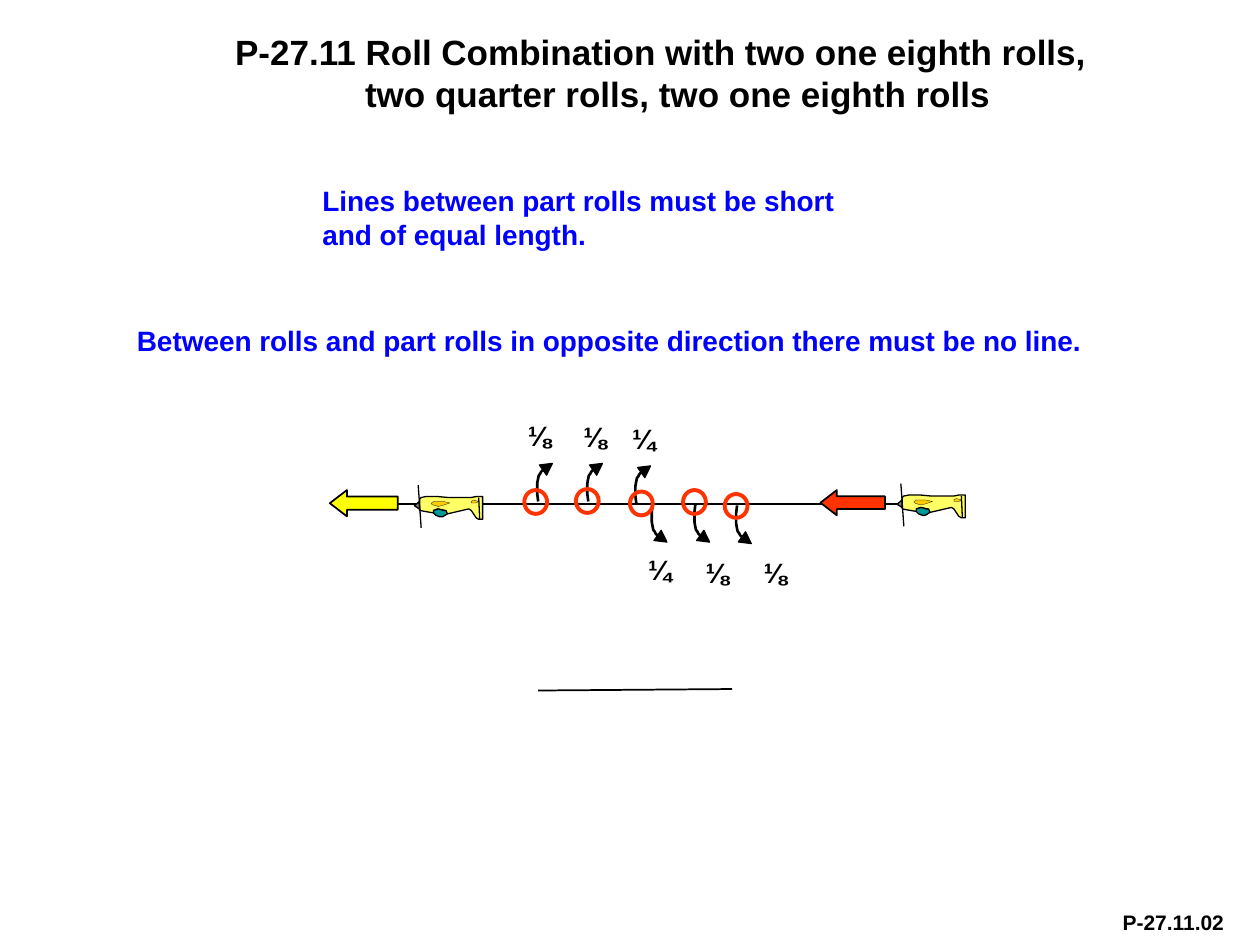
from dataclasses import dataclass

from lxml.etree import SubElement
from pptx import Presentation
from pptx.dml.color import RGBColor as Color
from pptx.enum.shapes import MSO_CONNECTOR as Connector, MSO_SHAPE as Preset
from pptx.enum.text import PP_ALIGN as Align
from pptx.oxml.ns import qn
from pptx.util import Cm, Pt


@dataclass(frozen=True)
class Theme:
    font: str = "Arial"
    black: str = "000000"
    note: str = "0000FF"
    roll: str = "FF3300"
    exit: str = "FFFF00"
    body: str = "FFFF66"
    canopy: str = "009999"
    wing: str = "FFCC00"
    spinner: str = "808080"
    title_size: float = 20
    text_size: float = 16
    footer_size: float = 12


THEME = Theme()

FUSELAGE = [
    (28, 56), (10, 53), (0, 51), (0, 28), (3, 25), (13, 23), (36, 23),
    (58, 25), (104, 25), (114, 23), (127, 23), (127, 69), (119, 69),
    (114, 66), (104, 51), (99, 48), (56, 58), (51, 51), (36, 48), (30, 51),
]
CANOPY = [
    (56, 58), (53, 51), (48, 51), (38, 48), (28, 51),
    (28, 56), (33, 61), (41, 64), (46, 64),
]
WING = [
    (61, 36), (46, 41), (38, 43), (30, 41), (25, 39),
    (23, 37), (28, 33), (38, 33), (48, 33),
]
TAIL = [(119, 33), (109, 30), (104, 33), (104, 36), (114, 36)]


def add_text(page, text, left, top, width, height, size=THEME.text_size,
             color=THEME.black, align=Align.LEFT, hanging=0):
    box = page.shapes.add_textbox(Cm(left), Cm(top), Cm(width), Cm(height))
    box.text_frame.word_wrap = True
    para = box.text_frame.paragraphs[0]
    para.text = text
    para.alignment = align
    if hanging:
        properties = para._p.get_or_add_pPr()
        properties.set("marL", str(Cm(hanging)))
        properties.set("indent", str(-Cm(hanging)))
    for span in para.runs:
        span.font.name = THEME.font
        span.font.size = Pt(size)
        span.font.bold = True
        span.font.color.rgb = Color.from_string(color)


def paint(shape, fill, line, weight):
    shape.shadow.inherit = False
    if fill:
        shape.fill.solid()
        shape.fill.fore_color.rgb = Color.from_string(fill)
    else:
        shape.fill.background()
    shape.line.color.rgb = Color.from_string(line)
    shape.line.width = Pt(weight)


def add_preset(page, preset, left, top, width, height, fill=None,
               line=THEME.black, weight=1.0, rotation=0):
    shape = page.shapes.add_shape(preset, Cm(left), Cm(top), Cm(width), Cm(height))
    shape.rotation = rotation
    paint(shape, fill, line, weight)
    return shape


def add_outline(page, points, x, y, fill=None, weight=0.75, close=True):
    builder = page.shapes.build_freeform(*points[0], scale=Cm(0.01))
    builder.add_line_segments(points[1:], close=close)
    paint(builder.convert_to_shape(Cm(x), Cm(y)), fill, THEME.black, weight)


def add_line(page, x1, y1, x2, y2, weight=1.0):
    line = page.shapes.add_connector(
        Connector.STRAIGHT, Cm(x1), Cm(y1), Cm(x2), Cm(y2))
    line.line.color.rgb = Color.from_string(THEME.black)
    line.line.width = Pt(weight)
    SubElement(line._element.spPr, qn("a:effectLst"))


def add_block_arrow(page, left, top, width, height, fill):
    arrow = add_preset(page, Preset.LEFT_ARROW, left, top, width, height, fill)
    arrow.adjustments[0] = 0.5
    arrow.adjustments[1] = 0.65


def add_roll_arrow(page, x, y, direction):
    steps = 12
    points = []
    for step in range(steps + 1):
        t = step / steps
        first, second, third = 3 * t * (1 - t) ** 2, 3 * t * t * (1 - t), t ** 3
        points.append((-5 * first - 3 * second + 13 * third,
                       direction * (33 * first + 56 * second + 66 * third)))
    add_outline(page, points, x, y, weight=1.5, close=False)
    width, height = 0.25, 0.23
    add_preset(page, Preset.ISOSCELES_TRIANGLE,
               x + 0.19 - width / 2, y + direction * 0.7 - height / 2,
               width, height, THEME.black, weight=0.75,
               rotation=90 + direction * 35.5)


def add_plane(page, x, y):
    add_line(page, x - 0.03, y, x, y + 0.41, 0.75)
    add_outline(page, FUSELAGE, x, y, THEME.body)
    add_outline(page, CANOPY, x, y, THEME.canopy)
    for panel in (WING, TAIL):
        add_outline(page, panel, x, y, THEME.wing, 0.13)
    add_line(page, x + 1.19, y + 0.25, x + 1.21, y + 0.69, 0.75)
    add_preset(page, Preset.ISOSCELES_TRIANGLE, x - 0.13, y + 0.36, 0.15, 0.1,
               THEME.spinner, weight=0.75, rotation=267)
    add_line(page, x, y + 0.43, x + 0.03, y + 0.86, 0.75)


def main():
    deck = Presentation()
    deck.slide_width, deck.slide_height = Cm(25.4), Cm(19.05)
    page = deck.slides.add_slide(deck.slide_layouts[6])

    add_text(page, "P-27.11 Roll Combination with two one eighth rolls, \v"
             "two quarter rolls, two one eighth rolls",
             4.49, 0.49, 20.91, 2.69, THEME.title_size, hanging=2.62)
    add_text(page, "P-27.11.02", 22.38, 18.21, 2.62, 0.76, THEME.footer_size)
    add_text(page, "Lines between part rolls must be short \vand of equal length.",
             6.25, 3.58, 11.53, 1.63, color=THEME.note)
    add_text(page, "Between rolls and part rolls in opposite direction "
             "there must be no line.", 2.51, 6.4, 19.79, 0.94, color=THEME.note)

    add_line(page, 10.85, 13.92, 14.76, 13.89)
    add_line(page, 7.44, 10.16, 19.48, 10.16)
    add_block_arrow(page, 16.54, 9.88, 1.3, 0.51, THEME.roll)
    add_block_arrow(page, 6.65, 9.88, 1.37, 0.53, THEME.exit)
    for x, y in ((18.19, 9.75), (8.46, 9.78)):
        add_plane(page, x, y)

    for x, y, direction in (
        (10.85, 10.11, -1), (11.86, 10.11, -1), (12.83, 10.16, -1),
        (13.16, 10.16, 1), (14.02, 10.16, 1), (14.86, 10.19, 1),
    ):
        add_roll_arrow(page, x, y, direction)
    for text, left, top, width in (
        ("⅛", 10.36, 8.31, 1.02), ("⅛", 11.43, 8.33, 1.12),
        ("¼", 12.42, 8.38, 1.12), ("¼", 12.65, 11.02, 1.3),
        ("⅛", 13.87, 11.07, 1.17), ("⅛", 15.14, 11.07, 0.97),
    ):
        add_text(page, text, left, top, width, 0.94, align=Align.CENTER)
    for left, top in ((10.57, 9.88), (11.61, 9.86), (12.7, 9.91),
                      (13.77, 9.88), (14.61, 9.96)):
        add_preset(page, Preset.OVAL, left, top, 0.46, 0.48,
                   line=THEME.roll, weight=2.25)

    deck.save("out.pptx")


if __name__ == "__main__":
    main()
